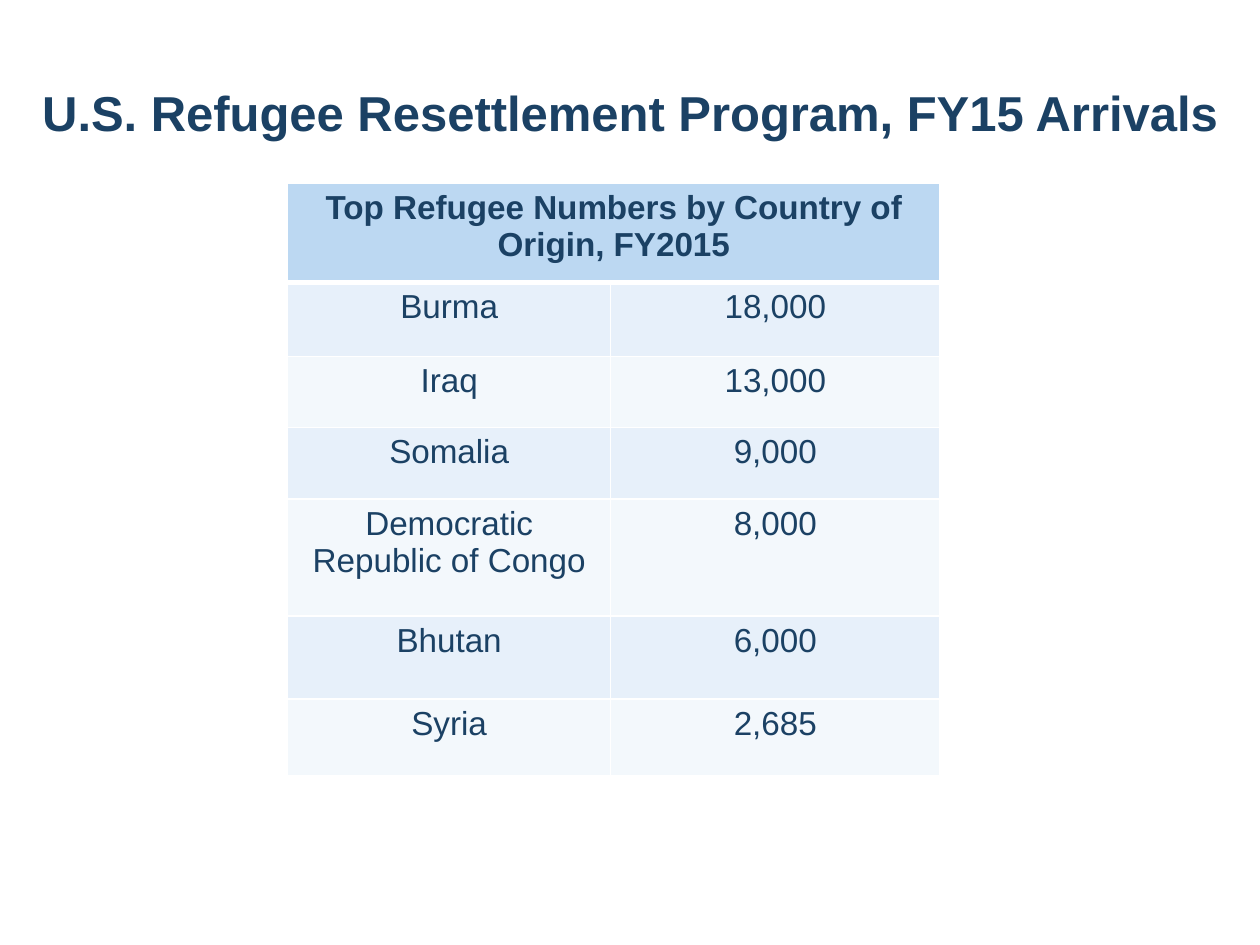
from lxml.etree import SubElement
from pptx import Presentation
from pptx.dml.color import RGBColor
from pptx.enum.text import MSO_ANCHOR, PP_ALIGN
from pptx.oxml.ns import qn
from pptx.util import Cm, Pt

NAVY = RGBColor(0x1B, 0x41, 0x64)
HEADER_BLUE = RGBColor(0xBC, 0xD8, 0xF2)
BAND_DARK = RGBColor(0xE7, 0xF0, 0xFA)
BAND_LIGHT = RGBColor(0xF3, 0xF8, 0xFC)
WHITE = RGBColor(0xFF, 0xFF, 0xFF)

TITLE = "U.S. Refugee Resettlement Program, FY15 Arrivals"
HEADING = "Top Refugee Numbers by Country of Origin, FY2015"
ARRIVALS = [
    ("Burma", "18,000"),
    ("Iraq", "13,000"),
    ("Somalia", "9,000"),
    ("Democratic Republic of Congo", "8,000"),
    ("Bhutan", "6,000"),
    ("Syria", "2,685"),
]
COLUMN_WIDTHS = [6.51, 6.64]
ROW_HEIGHTS = [2.0, 1.5, 1.43, 1.44, 2.36, 1.67, 1.54]


def write(text_frame, text, size, bold):
    text_frame.text = text
    paragraph = text_frame.paragraphs[0]
    paragraph.alignment = PP_ALIGN.CENTER
    font = paragraph.font
    font.name = "Arial"
    font.size = Pt(size)
    font.bold = bold
    font.color.rgb = NAVY


def add_borders(cell, bottom_width=1):
    """Give the cell white borders; call before the fill, which must follow them."""
    properties = cell._tc.get_or_add_tcPr()
    for side in "LRTB":
        width = bottom_width if side == "B" else 1
        border = SubElement(properties, qn(f"a:ln{side}"), w=str(Pt(width)))
        fill = SubElement(border, qn("a:solidFill"))
        SubElement(fill, qn("a:srgbClr"), val=str(WHITE))


def format_cell(cell, text, color, bold=False, bottom_width=1):
    add_borders(cell, bottom_width)
    cell.fill.solid()
    cell.fill.fore_color.rgb = color
    write(cell.text_frame, text, 19, bold)


def set_title(slide):
    title = slide.shapes.title
    title.left, title.top = Cm(0), Cm(1.35)
    title.width, title.height = Cm(25.4), Cm(2.87)
    frame = title.text_frame
    frame.vertical_anchor = MSO_ANCHOR.MIDDLE
    frame.margin_bottom = Cm(1.17)
    write(frame, TITLE, 28, True)


def add_arrivals_table(slide):
    table = slide.shapes.add_table(
        len(ROW_HEIGHTS), len(COLUMN_WIDTHS), Cm(5.8), Cm(3.69),
        Cm(sum(COLUMN_WIDTHS)), Cm(sum(ROW_HEIGHTS)),
    ).table
    for column, width in zip(table.columns, COLUMN_WIDTHS):
        column.width = Cm(width)
    for row, height in zip(table.rows, ROW_HEIGHTS):
        row.height = Cm(height)

    heading = table.cell(0, 0)
    heading.merge(table.cell(0, 1))
    format_cell(heading, HEADING, HEADER_BLUE, bold=True, bottom_width=3)
    for row, arrival in enumerate(ARRIVALS, start=1):
        band = BAND_DARK if row % 2 else BAND_LIGHT
        for column, text in enumerate(arrival):
            format_cell(table.cell(row, column), text, band)


def main():
    presentation = Presentation()
    presentation.slide_width = Cm(25.4)
    presentation.slide_height = Cm(19.05)
    slide = presentation.slides.add_slide(presentation.slide_layouts[5])
    set_title(slide)
    add_arrivals_table(slide)
    presentation.save("out.pptx")


if __name__ == "__main__":
    main()
